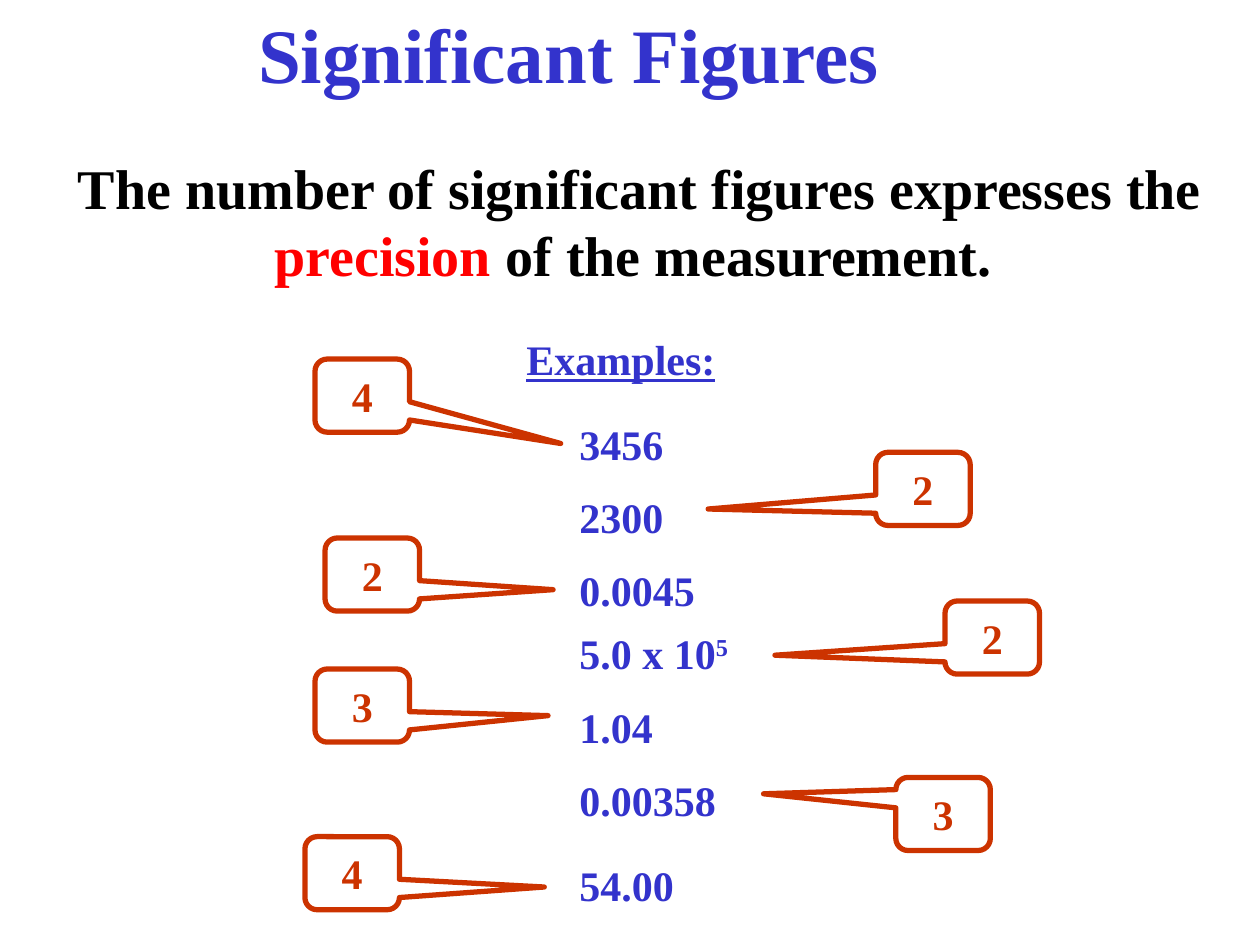
from dataclasses import dataclass

from pptx import Presentation
from pptx import util as u
from pptx.dml.color import RGBColor
from pptx.enum import shapes, text

PX = 9144


@dataclass(frozen=True)
class Theme:
    font: str = "Times New Roman"
    blue: str = "3333CC"
    black: str = "000000"
    red: str = "FF0000"
    rust: str = "CC3300"
    title: int = 44
    body: int = 32
    small: int = 24
    line: int = 3


class Deck:
    """Holds the theme and the current slide, and draws each kind of element."""

    def __init__(self, theme):
        self.theme = theme
        self.prs = Presentation()
        self.prs.slide_width, self.prs.slide_height = 1000 * PX, 750 * PX
        self.slide = self.prs.slides.add_slide(self.prs.slide_layouts[6])

    def run(self, para, words, size, color, under=None, base=None):
        run = para.add_run()
        run.text = words
        font = run.font
        font.name, font.size, font.bold = self.theme.font, u.Pt(size), True
        font.color.rgb = RGBColor.from_string(color)
        font.underline = under
        if base:
            run._r.get_or_add_rPr().set("baseline", str(base))

    def label(self, box, runs, size, wrap=False, align=None):
        shape = self.slide.shapes.add_textbox(*(n * PX for n in box))
        frame = shape.text_frame
        frame.word_wrap = wrap
        frame.auto_size = text.MSO_AUTO_SIZE.SHAPE_TO_FIT_TEXT
        para = frame.paragraphs[0]
        para.alignment = align
        for words, color, *style in runs:
            self.run(para, words, size, color, *style)

    def callout(self, words, left, top, tip, wide=75, high=58):
        kind = shapes.MSO_SHAPE.ROUNDED_RECTANGULAR_CALLOUT
        shape = self.slide.shapes.add_shape(
            kind, left * PX, top * PX, wide * PX, high * PX)
        shape.adjustments[0] = (tip[0] - left - wide / 2) / wide
        shape.adjustments[1] = (tip[1] - top - high / 2) / high
        shape.shadow.inherit = False
        shape.fill.background()
        shape.line.color.rgb = RGBColor.from_string(self.theme.rust)
        shape.line.width = u.Pt(self.theme.line)
        frame = shape.text_frame
        frame.word_wrap = False
        frame.vertical_anchor = text.MSO_ANCHOR.MIDDLE
        para = frame.paragraphs[0]
        para.alignment = text.PP_ALIGN.CENTER
        self.run(para, words, self.theme.small, self.theme.rust)


def main():
    look = Theme()
    deck = Deck(look)
    blue, black = look.blue, look.black
    deck.label((195, 0, 613, 84), [("Significant Figures", blue)],
               look.title, wrap=True)
    deck.label((47, 117, 922, 172), [
        ("The number of significant figures expresses the ", black),
        ("precision", look.red),
        (" of the measurement. ", black),
    ], look.body, wrap=True, align=text.PP_ALIGN.CENTER)
    deck.label((408, 260, 189, 51), [("Examples:", blue, True)], look.small)

    rows = [
        (327, 95, "3456", "", "4", 250, 285, (445, 352)),
        (385, 95, "2300", "", "2", 695, 359, (562, 404)),
        (443, 123, "0.0045", "", "2", 258, 427, (439, 468)),
        (493, 154, "5.0 x 10", "5", "2", 750, 477, (615, 520)),
        (552, 86, "1.04", "", "3", 250, 531, (435, 568)),
        (610, 142, "0.00358", "", "3", 711, 617, (606, 630)),
        (677, 105, "54.00", "", "4", 242, 664, (432, 704)),
    ]
    for top, wide, value, power, count, left, high, tip in rows:
        runs = [(value, blue)]
        if power:
            runs.append((power, blue, None, 30000))
        deck.label((450, top, wide, 51), runs, look.small)
        deck.callout(count, left, high, tip)

    deck.prs.save("out.pptx")


if __name__ == "__main__":
    main()
